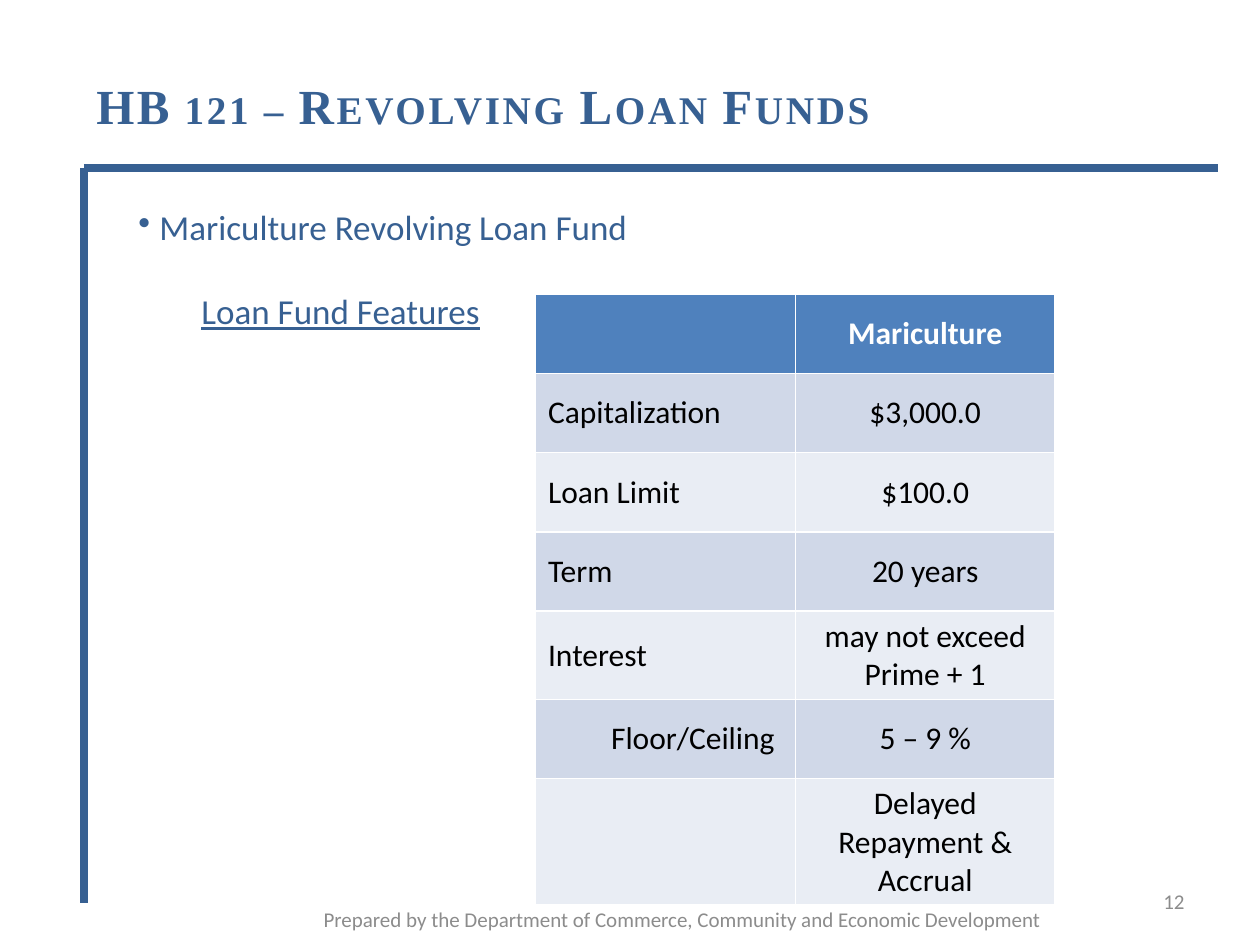
import pptx
import pptx.util
import pptx.dml.color
import pptx.enum.shapes
import pptx.enum.text
import lxml.etree

Pt = pptx.util.Pt
Align = pptx.enum.text.PP_ALIGN
Mid = pptx.enum.text.MSO_ANCHOR.MIDDLE
Top = pptx.enum.text.MSO_ANCHOR.TOP

theme = {
    "sans": "Calibri", "serif": "Times New Roman",
    "navy": "376092", "head": "4F81BD", "bands": ("D0D8E8", "E9EDF4"),
    "white": "FFFFFF", "black": "000000", "gray": "8C8C8C",
    "title": 28, "body": 20, "cell": 18, "foot": 12, "rule": 4.5,
}

deck = pptx.Presentation()
deck.slide_width = pptx.util.Inches(10)
deck.slide_height = pptx.util.Inches(7.5)
slide = deck.slides.add_slide(deck.slide_layouts[6])
shapes = slide.shapes
unit = deck.slide_width // 120  # the slide is a grid of 120 columns by 90 rows


def add_box(left, top, wide, high, anchor=Mid):
    box = shapes.add_textbox(*(int(n * unit) for n in (left, top, wide, high)))
    frame = box.text_frame
    frame.word_wrap = True
    frame.vertical_anchor = anchor
    return frame


def add_run(para, text, size, color, font="sans", bold=False):
    run = para.add_run()
    run.text = text
    run.font.name = theme[font]
    run.font.size = Pt(theme[size])
    run.font.bold = bold
    run.font.color.rgb = pptx.dml.color.RGBColor.from_string(theme[color])
    return run


# Title in spaced small caps
para = add_box(8, 2, 107, 17).paragraphs[0]
para.line_spacing = Pt(27)
run = add_run(para, "HB 121 – Revolving Loan Funds", "title", "navy", "serif", True)
props = run.font._element
props.set("cap", "small")
props.set("spc", "150")

# Rules down the left and under the title
for right, low in ((8, 86), (116, 16)):
    rule = shapes.add_connector(pptx.enum.shapes.MSO_CONNECTOR.STRAIGHT,
                                8 * unit, 16 * unit, right * unit, low * unit)
    rule.line.width = Pt(theme["rule"])
    rule.line.color.rgb = pptx.dml.color.RGBColor.from_string(theme["navy"])
    lxml.etree.SubElement(rule._element.spPr, pptx.oxml.ns.qn("a:effectLst"))

# Fund name and features heading
frame = add_box(12, 19, 88, 29.5, Top)
para = frame.paragraphs[0]
para.space_after = Pt(24)
add_run(para, "Mariculture Revolving Loan Fund", "body", "navy")
props = para._p.get_or_add_pPr()
props.set("marL", str(2 * unit))
props.set("indent", str(-2 * unit))
mark = lxml.etree.SubElement(props, pptx.oxml.ns.qn("a:buChar"))
mark.set("char", "•")
para = frame.add_paragraph()
para._p.get_or_add_pPr().set("marL", str(6 * unit))
add_run(para, "Loan Fund Features", "body", "navy").font.underline = True

# Loan terms
rows = (
    ("", "Mariculture"),
    ("Capitalization", "$3,000.0"),
    ("Loan Limit", "$100.0"),
    ("Term", "20 years"),
    ("Interest", "may not exceed\nPrime + 1"),
    ("Floor/Ceiling", "5 – 9 %"),
    ("", "Delayed Repayment & Accrual"),
)
tall = {4: 8.4, 6: 12}
highs = [int(tall.get(i, 7.55) * unit) for i in range(len(rows))]
wide = int(24.75 * unit)
table = shapes.add_table(len(rows), 2, 51 * unit, 28 * unit, 2 * wide, sum(highs)).table
for col in table.columns:
    col.width = wide
for i, row in enumerate(rows):
    table.rows[i].height = highs[i]
    fill = theme["bands"][(i - 1) % 2] if i else theme["head"]
    for j, text in enumerate(row):
        cell = table.cell(i, j)
        cell.vertical_anchor = Mid
        cell.fill.solid()
        cell.fill.fore_color.rgb = pptx.dml.color.RGBColor.from_string(fill)
        for k, line in enumerate(text.split("\n") if text else ()):
            frame = cell.text_frame
            para = frame.add_paragraph() if k else frame.paragraphs[0]
            para.alignment = Align.CENTER if j else Align.LEFT
            add_run(para, line, "cell", "black" if i else "white", bold=i == 0)
sub = table.cell(5, 0).text_frame.paragraphs[0]
sub._p.get_or_add_pPr().set("marL", str(6 * unit))

# Page number and footer
source = "Prepared by the Department of Commerce, Community and Economic Development"
for place, align, text in (
    ((86, 83.4, 28, 4.8), Align.RIGHT, "12"),
    ((23, 85, 84, 5), Align.CENTER, source),
):
    para = add_box(*place).paragraphs[0]
    para.alignment = align
    add_run(para, text, "foot", "gray")

deck.save("out.pptx")
